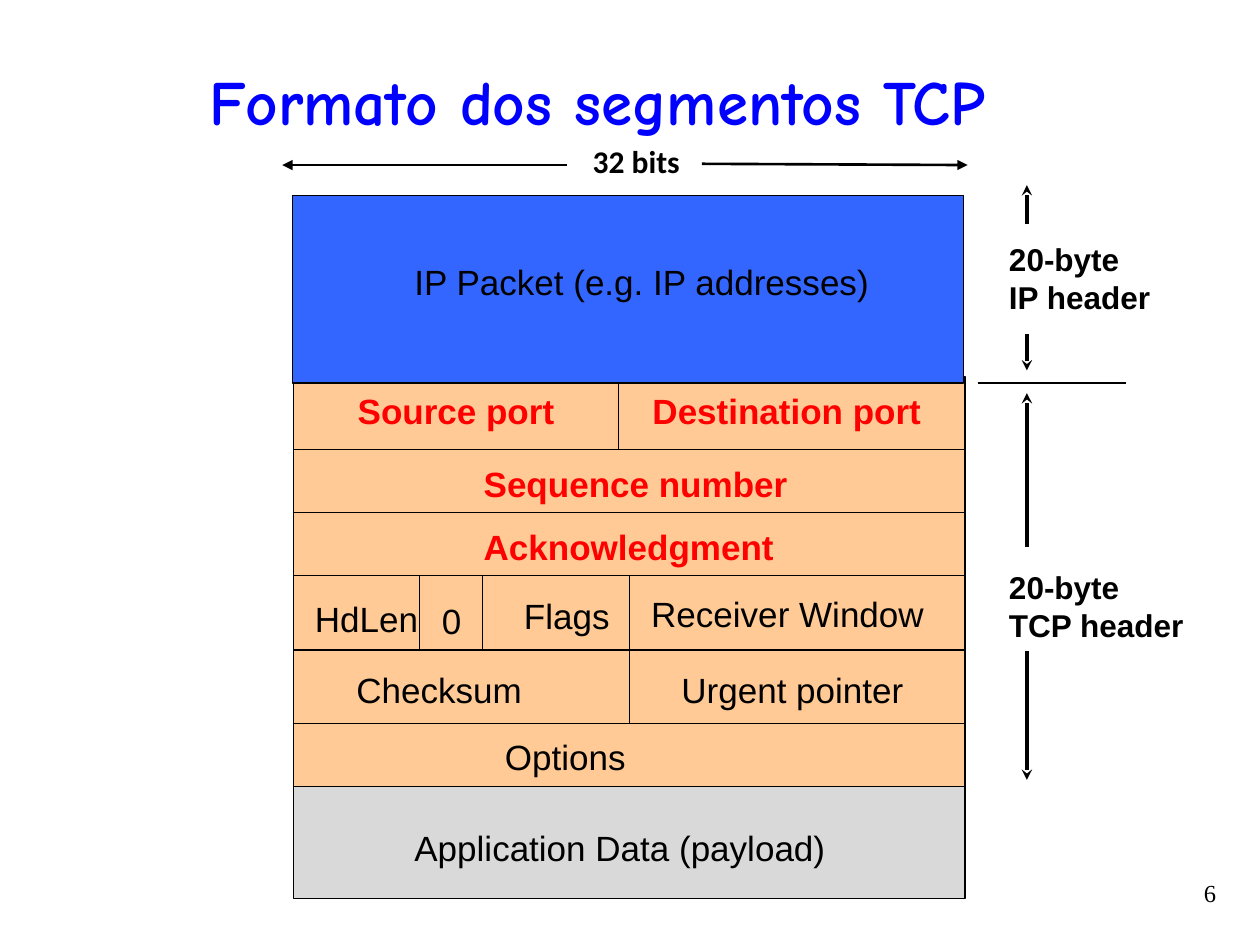
from dataclasses import dataclass

from lxml import etree
from pptx import Presentation
from pptx import util as u
from pptx.dml.color import RGBColor
from pptx.enum import shapes, text
from pptx.oxml import ns

I = u.Inches


@dataclass(frozen=True)
class Theme:
    ink: str = "000000"
    blue: str = "0000FF"
    red: str = "FF0000"
    peach: str = "FFCA95"
    gray: str = "D9D9D9"
    sky: str = "3366FF"
    font: str = "Arial"
    head: int = 36
    body: int = 20
    note: int = 18
    page: int = 14
    thin: float = 0.75
    mid: float = 1.5
    thick: float = 2


T = Theme()
ALIGN = text.PP_ALIGN


def write(slide, words, x, y, w, h, size=T.body, color=T.ink, font=T.font,
          bold=False, align=ALIGN.LEFT, wrap=False, anchor=text.MSO_ANCHOR.TOP):
    box = slide.shapes.add_textbox(I(x), I(y), I(w), I(h))
    frame = box.text_frame
    frame.word_wrap = wrap
    frame.vertical_anchor = anchor
    frame.text = words
    for para in frame.paragraphs:
        para.alignment = align
        face = para.runs[0].font
        face.name, face.size, face.bold = font, u.Pt(size), bold
        face.color.rgb = RGBColor.from_string(color)


def block(slide, x, y, w, h, fill):
    rect = slide.shapes.add_shape(shapes.MSO_SHAPE.RECTANGLE, I(x), I(y), I(w), I(h))
    rect.shadow.inherit = False
    rect.fill.solid()
    rect.fill.fore_color.rgb = RGBColor.from_string(fill)
    rect.line.color.rgb = RGBColor.from_string(T.ink)
    rect.line.width = u.Pt(T.thin)


def rule(slide, x1, y1, x2, y2, width=T.thin, tip=None):
    """Line whose arrowhead, if any, sits at the second point."""
    line = slide.shapes.add_connector(
        shapes.MSO_CONNECTOR.STRAIGHT, I(x1), I(y1), I(x2), I(y2))
    line.line.color.rgb = RGBColor.from_string(T.ink)
    line.line.width = u.Pt(width)
    if tip:
        etree.SubElement(line.line._get_or_add_ln(), ns.qn("a:tailEnd"), type=tip)
    etree.SubElement(line._element.spPr, ns.qn("a:effectLst"))


def tcp(slide, x, y, w):
    half = w / 2
    key = dict(color=T.red, bold=True)
    # Each row: height, fill, cell widths, labels (words, dx, dy, width, format)
    rows = [
        (0.58, T.peach, [2.58, w - 2.58], [("Source port", 0.41, 0.05, 1.85, key),
                                           ("Destination port", 2.75, 0.05, 2.45, key)]),
        (0.5, T.peach, [w], [("Sequence number", 1.41, 0.05, 2.75, key)]),
        (0.5, T.peach, [w], [("Acknowledgment", 1.41, 0.05, 2.65, key)]),
        (0.59, T.peach, [1, 0.5, half - 1.5, half], [("HdLen", 0.07, 0.12, 1.09, {}),
                                                     ("0", 1.08, 0.14, 0.4, {}),
                                                     ("Flags", 1.73, 0.1, 0.95, {}),
                                                     ("Receiver Window", 2.74, 0.08, 2.5, {})]),
        (0.58, T.peach, [half, half], [("Checksum", 0.4, 0.1, 1.75, {}),
                                       ("Urgent pointer", 2.98, 0.1, 2.2, {})]),
        (0.5, T.peach, [w], [("Options", 1.58, 0.05, 1.5, {})]),
        (0.89, T.gray, [w], [("Application Data (payload)", 0.86, 0.27, 3.65, {})]),
    ]
    for high, fill, cells, labels in rows:
        left = x
        for wide in cells:
            block(slide, left, y, wide, high, fill)
            left += wide
        for words, dx, dy, wide, style in labels:
            write(slide, words, x + dx, y + dy, wide, 0.44, **style)
        y += high


def packet(slide, x, y, w, h):
    block(slide, x, y, w, h, T.sky)
    write(slide, "IP Packet (e.g. IP addresses)", x + 0.87, y + 0.47, 4, 0.44)


def span(slide, words, x, y, w, h, up, down, gap):
    """Note a gap below an up arrow, with a down arrow under it."""
    mid = x + 0.24
    rule(slide, mid, y + up, mid, y, T.thick, "stealth")
    write(slide, words, x, y + up + gap, w, 0.7, size=T.note, bold=True)
    rule(slide, mid, y + h - down, mid, y + h, T.thick, "stealth")


def ruler(slide, x, y, w):
    rule(slide, x + 2.26, y, x, y, T.mid, "triangle")
    write(slide, "32 bits", x + 2.36, y - 0.23, 0.9, 0.4, size=T.note,
          font="Calibri", bold=True, align=ALIGN.CENTER)
    rule(slide, x + 3.33, y - 0.01, x + w, y, T.mid, "triangle")


def main():
    deck = Presentation()
    deck.slide_width, deck.slide_height = I(10), I(7.5)
    slide = deck.slides.add_slide(deck.slide_layouts[6])

    # Title and page number
    write(slide, "Formato dos segmentos TCP", 0.33, 0.42, 8.82, 0.75, size=T.head,
          color=T.blue, font="Comic Neue", bold=True, align=ALIGN.CENTER,
          wrap=True, anchor=text.MSO_ANCHOR.MIDDLE)
    write(slide, "6", 8.75, 6.92, 1, 0.42, size=T.page, font="Times New Roman",
          align=ALIGN.RIGHT, wrap=True)

    # Segment fields, with the IP packet over their top edge
    tcp(slide, 2.33, 2.99, 5.33)
    packet(slide, 2.32, 1.55, 5.33, 1.49)

    # Header sizes and word width
    span(slide, "20-byte\nIP header", 7.91, 1.47, 1.4, 1.47, 0.31, 0.29, 0.08)
    rule(slide, 7.76, 3.04, 8.94, 3.04)
    span(slide, "20-byte\nTCP header", 7.91, 3.12, 1.7, 3.07, 1.22, 1.02, 0.12)
    ruler(slide, 2.24, 1.31, 5.44)

    deck.save("out.pptx")


if __name__ == "__main__":
    main()
